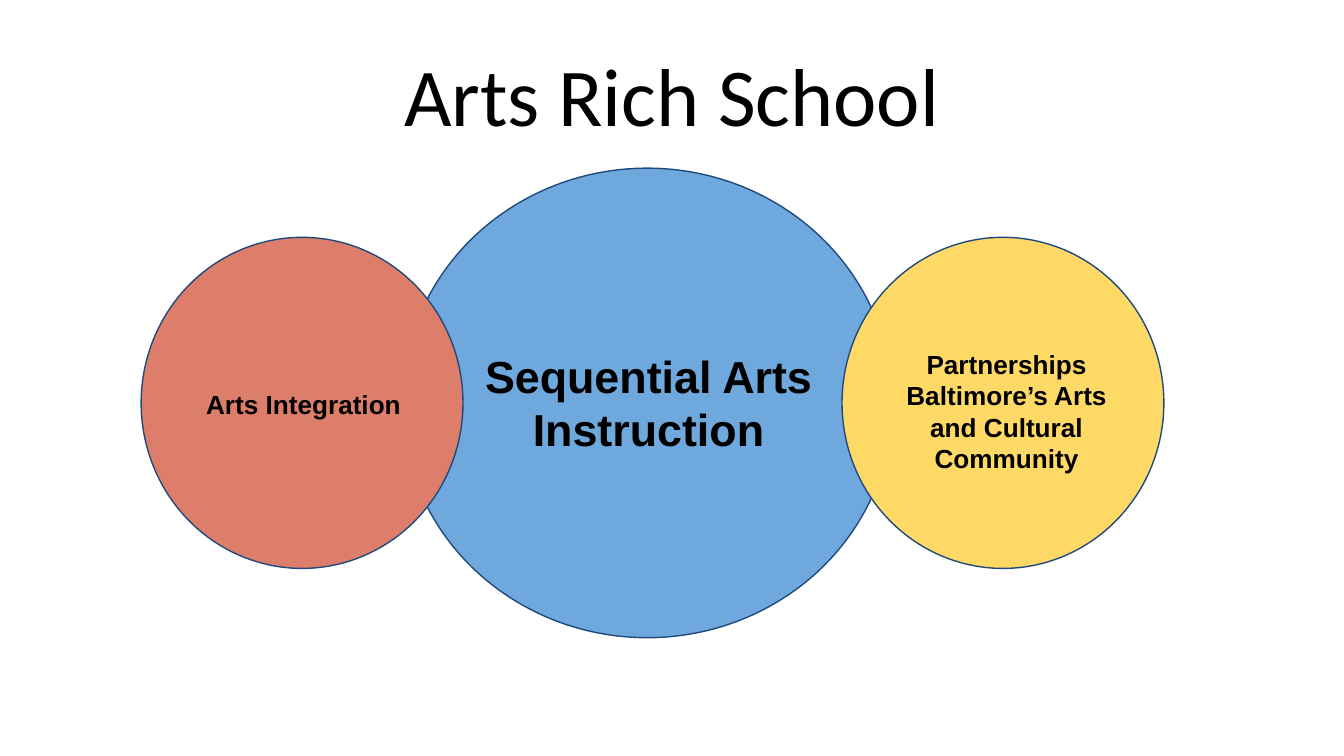
from pptx import Presentation
from pptx.dml.color import RGBColor
from pptx.enum.shapes import MSO_SHAPE as SHAPE
from pptx.enum.text import MSO_ANCHOR as ANCHOR, PP_ALIGN as ALIGN
from pptx.util import Inches, Pt

WIDTH = Inches(10)
HEIGHT = WIDTH * 9 // 16
AXIS = 53.3
CIRCLES = [
    (29.9, 36.5, 62.1, "6FA8DC"),
    (10.5, 23.95, 43.8, "DD7E6B"),
    (62.65, 23.95, 43.8, "FFD966"),
]
LABELS = [
    ((27.3, 44.3, 41.9, 35.4), "Sequential Arts Instruction", 24, ALIGN.CENTER),
    ((14.35, 49.6, 18, 12.4), "Arts Integration", 14, ALIGN.LEFT),
    ((64.6, 44.3, 20.6, 10.9),
     "Partnerships Baltimore’s Arts and Cultural Community", 14, ALIGN.CENTER),
]


def color(code):
    """Turn a hex string into a colour."""
    return RGBColor.from_string(code)


def place(box):
    """Turn percentages of the slide into left, top, width and height."""
    return [int(share * side / 100)
            for share, side in zip(box, (WIDTH, HEIGHT) * 2)]


def write(sp, text, size, font, align, anchor, bold=False):
    """Fill a shape with one formatted run."""
    tf = sp.text_frame
    tf.word_wrap = True
    tf.vertical_anchor = anchor
    tf.margin_left = tf.margin_right = Inches(0.1)
    tf.margin_top = tf.margin_bottom = Inches(0.1)
    p = tf.paragraphs[0]
    p.alignment = align
    r = p.add_run()
    r.text = text
    r.font.size, r.font.name, r.font.bold = Pt(size), font, bold
    r.font.color.rgb = color("000000")


def add_title(slide, box, text):
    """Move and format the title placeholder."""
    sp = slide.shapes.title
    sp.left, sp.top, sp.width, sp.height = place(box)
    write(sp, text, 44, "Calibri", ALIGN.CENTER, ANCHOR.MIDDLE)


def add_circle(slide, box, fill):
    """Draw one outlined ellipse."""
    sp = slide.shapes.add_shape(SHAPE.OVAL, *place(box))
    sp.shadow.inherit = False
    sp.fill.solid()
    sp.fill.fore_color.rgb = color(fill)
    sp.line.color.rgb = color("1F497D")
    sp.line.width = Pt(0.75)


def add_label(slide, box, text, size, align):
    """Place one bold label over a circle."""
    sp = slide.shapes.add_textbox(*place(box))
    write(sp, text, size, "Arial", align, ANCHOR.TOP, bold=True)


def main():
    """Build the slide and save it."""
    prs = Presentation()
    prs.slide_width, prs.slide_height = WIDTH, HEIGHT
    slide = prs.slides.add_slide(prs.slide_layouts[5])
    add_title(slide, (5, 4.1, 90, 16.7), "Arts Rich School")
    for left, width, height, fill in CIRCLES:
        add_circle(slide, (left, AXIS - height / 2, width, height), fill)
    for box, text, size, align in LABELS:
        add_label(slide, box, text, size, align)
    prs.save("out.pptx")


if __name__ == "__main__":
    main()
